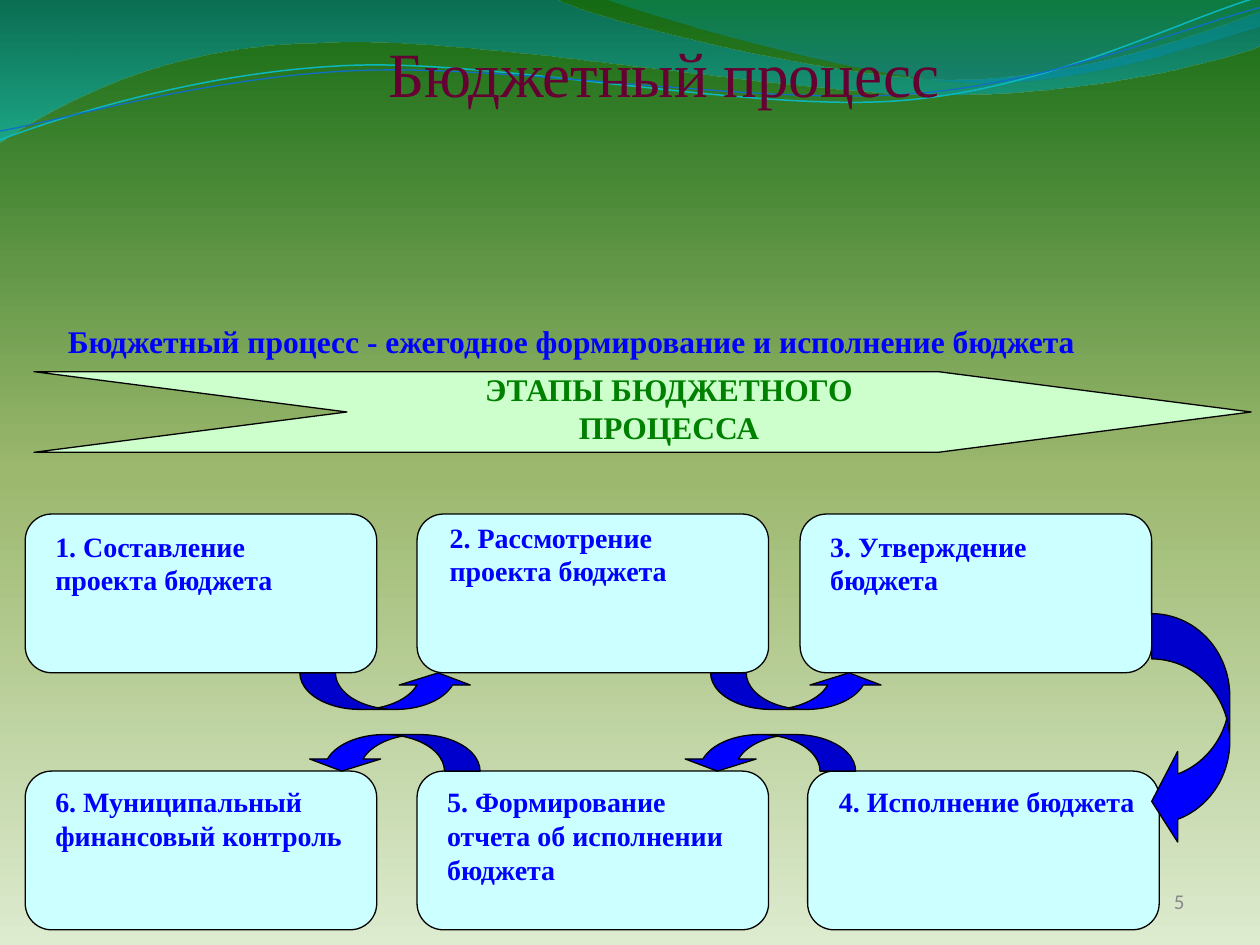
from math import cos, radians, sin

from lxml import etree
from pptx import Presentation
from pptx.dml.color import RGBColor
from pptx.enum.shapes import MSO_SHAPE
from pptx.enum.text import MSO_ANCHOR, PP_ALIGN
from pptx.oxml.ns import qn
from pptx.util import Inches, Pt

CHEVRON = MSO_SHAPE.CHEVRON
CARD = MSO_SHAPE.FLOWCHART_ALTERNATE_PROCESS
UP_ARROW = MSO_SHAPE.CURVED_UP_ARROW
LEFT_ARROW = MSO_SHAPE.CURVED_LEFT_ARROW
TOP, MIDDLE = MSO_ANCHOR.TOP, MSO_ANCHOR.MIDDLE
LEFT, CENTER, RIGHT = PP_ALIGN.LEFT, PP_ALIGN.CENTER, PP_ALIGN.RIGHT

SERIF, SANS = "Times New Roman", "Calibri"
COLORS = {
    "title": "660033", "text": "0000FF", "banner": "CCFFCC",
    "banner_text": "008000", "card": "CCFFFF", "arrow": "0000FF",
    "outline": "000000", "number": "898989",
    "cyan_line": "0AB8BF", "blue_line": "0F6FC6",
}
BACKGROUND = [(0, "DDEBCF", 100), (50, "9CB86E", 100), (100, "156B13", 100)]
WAVES = [
    ((-0.01, -0.01, 10.02, 1.14),
     [(0, -0.01), (4.4, -0.01), (4.76, 0.17, 6.64, 0.63, 7.58, 0.63),
      (8.53, 0.63, 9.58, 0.26, 10, 0.09), (10.01, 0.36),
      (9.83, 0.44, 8.7, 0.76, 7.46, 0.75),
      (6.22, 0.75, 3.82, 0.28, 2.57, 0.34),
      (1.29, 0.35, 0.46, 0.83, -0.01, 1.13), (0, -0.01)],
     [(0, "0074A1", 45), (100, "00C6CF", 55)]),
    ((4.79, -0.01, 5.21, 0.7),
     [(4.79, -0.01), (5.09, 0.11, 6.82, 0.62, 7.69, 0.65),
      (8.56, 0.69, 9.61, 0.32, 10, 0.21), (10, 0), (4.79, -0.01)],
     [(0, "00A1A9", 30), (80, "008BBF", 45)]),
]
LINE_TILT = -2.7
WAVE_LINES = [
    ((-0.02, 0.22, 10.02, 0.71),
     [(0, 1.11), (0.48, 0.93, 1.58, 0.57, 2.77, 0.52),
      (3.95, 0.47, 5.93, 0.89, 7.13, 0.8),
      (8.33, 0.71, 9.38, 0.15, 9.98, -0.02)], "cyan_line", 0.85),
    ((-0.02, 0.3, 10.03, 0.58),
     [(0, 1.04), (0.47, 0.96, 1.64, 0.61, 2.83, 0.56),
      (4.03, 0.51, 5.97, 0.83, 7.17, 0.75),
      (8.36, 0.67, 9.41, 0.21, 10, 0.06)], "blue_line", 0.75),
]
TOP_ROW, BOTTOM_ROW = 4.08, 6.12
CARD_W, CARD_H = 2.79, 1.26
CARDS = [
    (0.2, TOP_ROW, 0.14, 0.07, "1. Составление проекта бюджета"),
    (3.31, TOP_ROW, 0.16, 0, "2. Рассмотрение проекта бюджета"),
    (6.35, TOP_ROW, 0.14, 0.07, "3. Утверждение бюджета"),
    (6.41, BOTTOM_ROW, 0.15, 0.06, "4. Исполнение бюджета"),
    (3.31, BOTTOM_ROW, 0.14, 0.06, "5. Формирование отчета об исполнении бюджета"),
    (0.2, BOTTOM_ROW, 0.14, 0.06, "6. Муниципальный финансовый контроль"),
]
ARROW_W, ARROW_H = 1.38, 0.29
UP_ADJ = (0.973, 1.945, 0.333)
ARROWS = [
    (UP_ARROW, (2.38, TOP_ROW + CARD_H, ARROW_W, ARROW_H), UP_ADJ, 0),
    (UP_ARROW, (5.64, TOP_ROW + CARD_H, ARROW_W, ARROW_H), UP_ADJ, 0),
    (LEFT_ARROW, (9.14, 4.87, 0.62, 1.85), (0.58, 1.16, 0.333), 0),
    (UP_ARROW, (5.41, BOTTOM_ROW - ARROW_H, ARROW_W, ARROW_H), UP_ADJ, 180),
    (UP_ARROW, (2.43, BOTTOM_ROW - ARROW_H, ARROW_W, ARROW_H), UP_ADJ, 180),
]


def rgb(name):
    return RGBColor.from_string(COLORS[name])


def set_gradient(fill, element, stops, angle):
    fill.gradient()
    fill.gradient_angle = angle
    gs_list = element.xpath(".//a:gsLst")[0]
    for gs in list(gs_list):
        gs_list.remove(gs)
    for pos, color, opacity in stops:
        gs = etree.SubElement(gs_list, qn("a:gs"), pos=str(pos * 1000))
        clr = etree.SubElement(gs, qn("a:srgbClr"), val=color)
        if opacity < 100:
            etree.SubElement(clr, qn("a:alpha"), val=str(opacity * 1000))


def add_curve(s, box, segments, close, tilt=0):
    x, y, w, h = box
    builder = s.shapes.build_freeform(Inches(x), Inches(y))
    builder.add_line_segments([(Inches(x + w), Inches(y + h))], close=close)
    sp = builder.convert_to_shape()
    sp.shadow.inherit = False
    sp.rotation = tilt % 360
    outline = sp._element.xpath(".//a:path")[0]
    for child in list(outline):
        outline.remove(child)
    c, d = cos(radians(-tilt)), sin(radians(-tilt))
    for i, segment in enumerate(segments):
        tag = "a:moveTo" if i == 0 else "a:lnTo" if len(segment) == 2 else "a:cubicBezTo"
        step = etree.SubElement(outline, qn(tag))
        for px, py in zip(segment[::2], segment[1::2]):
            dx, dy = px - x - w / 2, py - y - h / 2
            etree.SubElement(step, qn("a:pt"),
                             x=str(Inches(w / 2 + dx * c - dy * d)),
                             y=str(Inches(h / 2 + dx * d + dy * c)))
    if close:
        etree.SubElement(outline, qn("a:close"))
    return sp


def add_waves(s):
    for box, segments, stops in WAVES:
        sp = add_curve(s, box, segments, True)
        set_gradient(sp.fill, sp._element, stops, 270)
        sp.line.fill.background()
    for box, segments, color, width in WAVE_LINES:
        sp = add_curve(s, box, segments, False, LINE_TILT)
        sp.fill.background()
        sp.line.color.rgb = rgb(color)
        sp.line.width = Pt(width)


def add_solid(s, kind, box, color, adjustments=(), rotation=0):
    sp = s.shapes.add_shape(kind, *map(Inches, box))
    sp.shadow.inherit = False
    sp.fill.solid()
    sp.fill.fore_color.rgb = rgb(color)
    sp.line.color.rgb = rgb("outline")
    sp.line.width = Pt(0.75)
    for i, value in enumerate(adjustments):
        sp.adjustments[i] = value
    sp.rotation = rotation


def write(sp, text, size, color, bold=False, font=SERIF, align=LEFT, anchor=TOP):
    tf = sp.text_frame
    tf.word_wrap = True
    tf.vertical_anchor = anchor
    p = tf.paragraphs[0]
    p.alignment = align
    r = p.add_run()
    r.text = text
    r.font.size = Pt(size)
    r.font.name = font
    r.font.bold = bold
    r.font.color.rgb = rgb(color)


def add_text(s, box, *args, **kwargs):
    write(s.shapes.add_textbox(*map(Inches, box)), *args, **kwargs)


def add_title(s, box):
    sp = s.shapes.title
    sp.left, sp.top, sp.width, sp.height = map(Inches, box)
    write(sp, "Бюджетный процесс", 36, "title")
    s.shapes._spTree.append(sp._element)


def add_banner(s, box):
    x, y, w, h = box
    add_solid(s, CHEVRON, box, "banner", (3.88,))
    add_text(s, (x + 2.87, y - 0.06, 4.34, h + 0.06), "ЭТАПЫ БЮДЖЕТНОГО ПРОЦЕССА",
             18, "banner_text", bold=True, align=CENTER)


def add_card(s, box, dx, dy, text):
    x, y, w, h = box
    add_solid(s, CARD, box, "card")
    add_text(s, (x + dx, y + dy, 2.55, 0.79), text, 16, "text", bold=True)


def main():
    prs = Presentation()
    prs.slide_width, prs.slide_height = Inches(10), Inches(7.5)
    s = prs.slides.add_slide(prs.slide_layouts[5])
    set_gradient(s.background.fill, s._element, BACKGROUND, 90)
    add_waves(s)
    add_banner(s, (0.27, 2.95, 9.66, 0.64))
    for x, y, dx, dy, text in CARDS:
        add_card(s, (x, y, CARD_W, CARD_H), dx, dy, text)
    for kind, box, adjustments, rotation in ARROWS:
        add_solid(s, kind, box, "arrow", adjustments, rotation)
    add_title(s, (2.98, 0.22, 4.95, 1.36))
    add_text(s, (0.44, 2.51, 9.56, 0.39),
             "Бюджетный процесс - ежегодное формирование и исполнение бюджета",
             18, "text", bold=True)
    add_text(s, (7.17, 6.95, 2.33, 0.4), "5", 12, "number", font=SANS,
             align=RIGHT, anchor=MIDDLE)
    prs.save("out.pptx")


if __name__ == "__main__":
    main()
